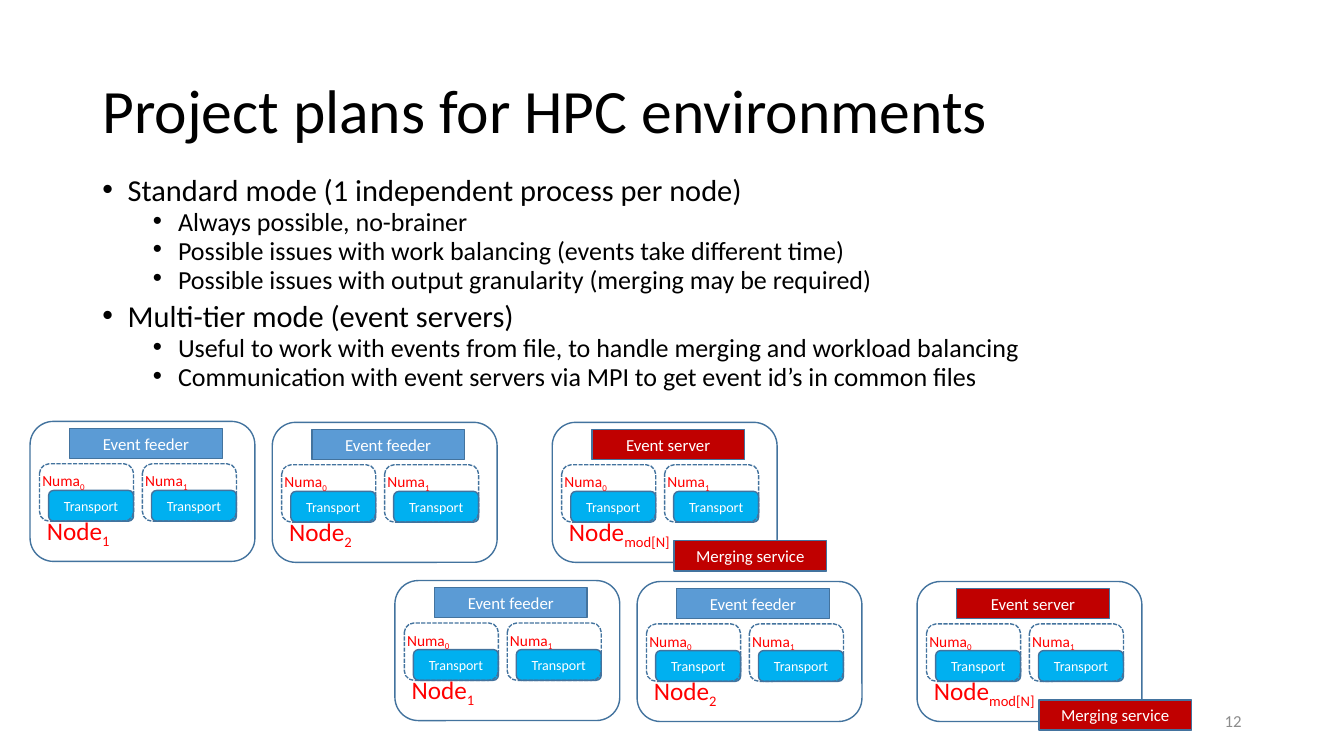
import pptx
import pptx.dml.color
import pptx.enum.dml
import pptx.enum.shapes
import pptx.enum.text
import pptx.oxml.ns
import pptx.util
import lxml.etree

Pt = pptx.util.Pt
RGBColor = pptx.dml.color.RGBColor
RECT = pptx.enum.shapes.MSO_SHAPE.RECTANGLE
ROUNDED = pptx.enum.shapes.MSO_SHAPE.ROUNDED_RECTANGLE
ALIGN = pptx.enum.text.PP_ALIGN
ANCHOR = pptx.enum.text.MSO_ANCHOR

FONT = "Calibri"
BLACK = RGBColor(0x00, 0x00, 0x00)
WHITE = RGBColor(0xFF, 0xFF, 0xFF)
RED = RGBColor(0xFF, 0x00, 0x00)
GREY = RGBColor(0x8C, 0x8C, 0x8C)
OUTLINE = RGBColor(0x43, 0x73, 0x9E)
FEEDER_BLUE = RGBColor(0x5B, 0x9B, 0xD5)
SERVER_RED = RGBColor(0xC0, 0x00, 0x00)
TRANSPORT_BLUE = RGBColor(0x00, 0xB0, 0xF0)

PLANS = [
    (0, "Standard mode (1 independent process per node)"),
    (1, "Always possible, no-brainer"),
    (1, "Possible issues with work balancing (events take different time)"),
    (1, "Possible issues with output granularity (merging may be required)"),
    (0, "Multi-tier mode (event servers)"),
    (1, "Useful to work with events from file, to handle merging and workload balancing"),
    (1, "Communication with event servers via MPI to get event id’s in common files"),
]
LEVELS = [(21.7, 10, 18), (18.6, 5, 54)]
HANGING = 18

NODES = [
    (0, 0, "1", "Event feeder", FEEDER_BLUE),
    (173, 0.7, "2", "Event feeder", FEEDER_BLUE),
    (373, 0.7, "mod[N]", "Event server", SERVER_RED),
]
CLUSTERS = [(21.5, 301), (282.1, 414.7)]
NUMA_PITCH = 73.5


def place(shape, left, top, width, height):
    shape.left, shape.top = Pt(left), Pt(top)
    shape.width, shape.height = Pt(width), Pt(height)


def format_runs(paragraph, size, color):
    for run in paragraph.runs:
        run.font.name = FONT
        run.font.size = Pt(size)
        run.font.color.rgb = color


def set_bullet(paragraph, indent):
    properties = paragraph._p.get_or_add_pPr()
    properties.set("marL", str(Pt(indent)))
    properties.set("indent", str(-Pt(HANGING)))
    bullet = lxml.etree.SubElement(properties, pptx.oxml.ns.qn("a:buChar"))
    bullet.set("char", "•")


def add_title(slide, text):
    title = slide.shapes.title
    place(title, 66, 28.8, 828, 104.4)
    frame = title.text_frame
    frame.text = text
    frame.auto_size = pptx.enum.text.MSO_AUTO_SIZE.NONE
    frame.vertical_anchor = ANCHOR.MIDDLE
    heading = frame.paragraphs[0]
    heading.alignment = ALIGN.LEFT
    heading.line_spacing = 0.9
    format_runs(heading, 44, BLACK)


def add_plans(slide):
    body = slide.placeholders[1]
    place(body, 66, 126, 736.6, 164.2)
    frame = body.text_frame
    frame.text = "\n".join(text for _, text in PLANS)
    frame.auto_size = pptx.enum.text.MSO_AUTO_SIZE.NONE
    for paragraph, (level, _) in zip(frame.paragraphs, PLANS):
        size, space_before, indent = LEVELS[level]
        paragraph.level = level
        paragraph.line_spacing = 0.7
        paragraph.space_before = Pt(space_before)
        set_bullet(paragraph, indent)
        format_runs(paragraph, size, BLACK)


def add_box(cluster, kind, left, top, width, height, fill=None):
    box = cluster.shapes.add_shape(kind, Pt(left), Pt(top), Pt(width), Pt(height))
    box.shadow.inherit = False
    box.line.color.rgb = OUTLINE
    box.line.width = Pt(1)
    if fill is None:
        box.fill.background()
    else:
        box.fill.solid()
        box.fill.fore_color.rgb = fill
    return box


def add_label(box, text, size):
    box.text_frame.text = text
    label = box.text_frame.paragraphs[0]
    label.alignment = ALIGN.CENTER
    format_runs(label, size, WHITE)


def add_indexed_label(box, name, index, size, anchor):
    box.text_frame.vertical_anchor = anchor
    label = box.text_frame.paragraphs[0]
    label.alignment = ALIGN.LEFT
    label.add_run().text = name
    subscript = label.add_run()
    subscript.text = index
    format_runs(label, size, RED)
    subscript.font._element.set("baseline", "-25000")


def add_service(cluster, left, top, text, fill):
    service = add_box(cluster, RECT, left, top, 109, 21.6, fill)
    add_label(service, text, 12)


def add_numa(cluster, left, top, index):
    transport = add_box(cluster, ROUNDED, left + 6.5, top + 19, 60.7, 22, TRANSPORT_BLUE)
    add_label(transport, "Transport", 10)
    numa = add_box(cluster, ROUNDED, left, top, 67.2, 41)
    numa.line.dash_style = pptx.enum.dml.MSO_LINE.SQUARE_DOT
    numa.text_frame.margin_left = numa.text_frame.margin_right = 0
    add_indexed_label(numa, "Numa", str(index), 11, ANCHOR.TOP)


def add_node(cluster, left, top, index, service, fill):
    add_service(cluster, left + 28.3, top + 5, service, fill)
    node = add_box(cluster, ROUNDED, left, top, 160.6, 100)
    add_indexed_label(node, "Node", index, 18, ANCHOR.BOTTOM)
    for numa in range(2):
        add_numa(cluster, left + 6.7 + numa * NUMA_PITCH, top + 30.3, numa)


def add_cluster(slide, left, top):
    cluster = slide.shapes.add_group_shape()
    for across, down, index, service, fill in NODES:
        add_node(cluster, left + across, top + down, index, service, fill)
    add_service(cluster, left + 460, top + 85.3, "Merging service", SERVER_RED)


def add_page_number(slide, number):
    page = slide.shapes.add_textbox(Pt(678), Pt(500.5), Pt(216), Pt(28.8))
    frame = page.text_frame
    frame.word_wrap = True
    frame.vertical_anchor = ANCHOR.MIDDLE
    frame.text = number
    frame.paragraphs[0].alignment = ALIGN.RIGHT
    format_runs(frame.paragraphs[0], 12, GREY)


def main():
    deck = pptx.Presentation()
    deck.slide_width, deck.slide_height = Pt(960), Pt(540)
    slide = deck.slides.add_slide(deck.slide_layouts[1])
    add_title(slide, "Project plans for HPC environments")
    add_plans(slide)
    for left, top in CLUSTERS:
        add_cluster(slide, left, top)
    add_page_number(slide, "12")
    deck.save("out.pptx")


if __name__ == "__main__":
    main()
